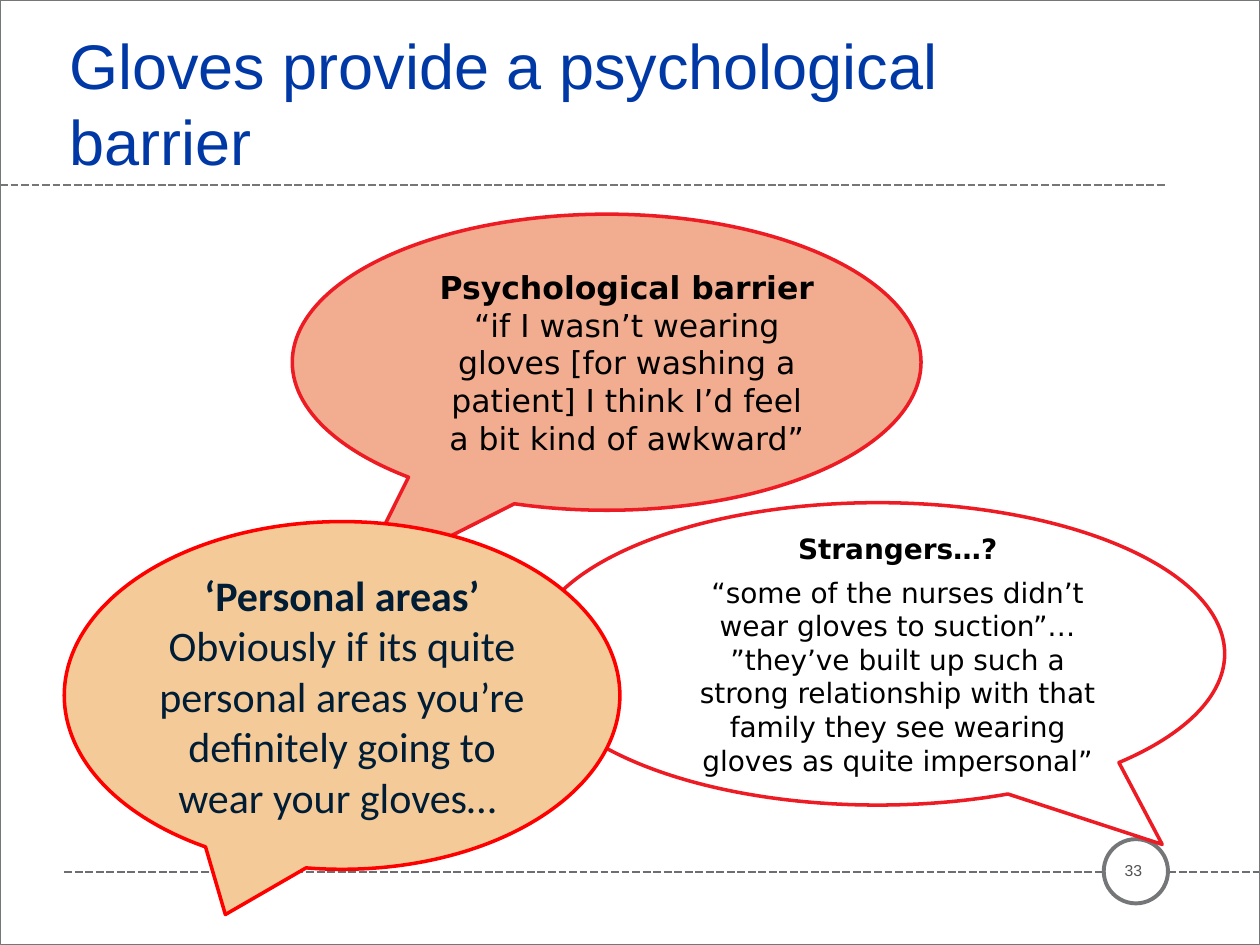
"""Build a slide of three quotations on gloves as a psychological barrier."""
from lxml.etree import SubElement
from pptx import Presentation
from pptx.dml.color import RGBColor
from pptx.enum.dml import MSO_LINE as Dash
from pptx.enum.shapes import MSO_CONNECTOR as Link, MSO_SHAPE as Kind
from pptx.enum.text import MSO_ANCHOR as Anchor, PP_ALIGN as Align
from pptx.oxml.ns import qn
from pptx.util import Inches, Pt

WIDE, HIGH = 10, 7.5
HUES = {
    "blue": "0039A6", "grey": "747678", "slate": "6D6E71", "dim": "525355",
    "white": "FFFFFF", "black": "000000", "navy": "001D35",
    "salmon": "F2AC90", "sand": "F4CB98", "rose": "ED1C24", "red": "FF0000",
}
TITLE = "Gloves provide a psychological barrier"
PAGE = "33"
RULES = [((0.51, WIDE), 6.92, "slate"), ((0, 9.25), 1.47, "grey")]
QUOTES = [
    {"at": (2.32, 1.7, 4.99, 2.35), "tip": (-0.4, 0.75),
     "fill": "salmon", "line": "rose", "font": ("DejaVu Sans", 18, "black"),
     "indent": 0.32, "gap": 0, "inset": (0.1, 0.05),
     "text": ("Psychological barrier",
              "“if I wasn’t wearing gloves [for washing a patient] "
              "I think I’d feel a bit kind of awkward”")},
    {"at": (4.21, 3.99, 5.51, 2.4), "tip": (0.41, 0.63),
     "fill": "white", "line": "rose", "font": ("DejaVu Sans", 16, "black"),
     "indent": 0.32, "gap": 6, "inset": (0.1, 0.05),
     "text": ("Strangers…?",
              "“some of the nurses didn’t wear gloves to suction”… "
              "”they’ve built up such a strong relationship with that "
              "family they see wearing gloves as quite impersonal”")},
    {"at": (0.51, 4.14, 4.41, 2.76), "tip": (-0.21, 0.63),
     "fill": "sand", "line": "red", "font": ("Calibri", 24, "navy"),
     "indent": 0, "gap": 0, "inset": (0.05, 0.05),
     "text": ("‘Personal areas’",
              "Obviously if its quite personal areas you’re "
              "definitely going to wear your gloves… ")},
]


def hue(name):
    return RGBColor.from_string(HUES[name])


def style(para, font, bold=False):
    for run in para.runs:
        run.font.name, run.font.size = font[0], Pt(font[1])
        run.font.color.rgb = hue(font[2])
        run.font.bold = bold


def rule(slide, span, y, color):
    link = slide.shapes.add_connector(
        Link.STRAIGHT, Inches(span[0]), Inches(y), Inches(span[1]), Inches(y))
    link.line.color.rgb, link.line.width = hue(color), Pt(1.5)
    link.line.dash_style = Dash.SQUARE_DOT
    SubElement(link._element.spPr, qn("a:effectLst"))


def shape(slide, kind, at, fill, line, width):
    item = slide.shapes.add_shape(kind, *map(Inches, at))
    item.shadow.inherit = False
    if fill:
        item.fill.solid()
        item.fill.fore_color.rgb = hue(fill)
    else:
        item.fill.background()
    item.line.color.rgb, item.line.width = hue(line), Pt(width)
    return item


def label(slide, at, text, font, anchor, align):
    frame = slide.shapes.add_textbox(*map(Inches, at)).text_frame
    frame.word_wrap, frame.vertical_anchor = True, anchor
    frame.text = text
    frame.paragraphs[0].alignment = align
    style(frame.paragraphs[0], font)


def quote(slide, data):
    item = shape(slide, Kind.OVAL_CALLOUT, data["at"],
                 data["fill"], data["line"], 2)
    item.adjustments[0], item.adjustments[1] = data["tip"]
    frame = item.text_frame
    frame.word_wrap, frame.vertical_anchor = True, Anchor.MIDDLE
    side, edge = map(Inches, data["inset"])
    frame.margin_left = frame.margin_right = side
    frame.margin_top = frame.margin_bottom = edge
    frame.text = "\n".join(data["text"])
    for i, para in enumerate(frame.paragraphs):
        para.alignment = Align.CENTER
        if data["indent"]:
            para.level = 1
            props = para._p.get_or_add_pPr()
            props.set("marL", str(Inches(data["indent"])))
            props.set("indent", "0")
        if i:
            para.space_before = Pt(data["gap"])
        style(para, data["font"], bold=i == 0)


def main():
    deck = Presentation()
    deck.slide_width, deck.slide_height = Inches(WIDE), Inches(HIGH)
    slide = deck.slides.add_slide(deck.slide_layouts[6])
    for span, y, color in RULES:
        rule(slide, span, y, color)
    shape(slide, Kind.OVAL, (8.76, 6.66, 0.51, 0.51), "white", "grey", 2.25)
    shape(slide, Kind.RECTANGLE, (0, 0, WIDE, HIGH), None, "grey", 0.5)
    label(slide, (0.45, 0.53, 7.62, 0.93), TITLE, ("Arial", 36, "blue"),
          Anchor.BOTTOM, Align.LEFT)
    label(slide, (8.78, 6.68, 0.43, 0.45), PAGE, ("Arial", 9, "dim"),
          Anchor.MIDDLE, Align.CENTER)
    for data in QUOTES:
        quote(slide, data)
    deck.save("out.pptx")


if __name__ == "__main__":
    main()
